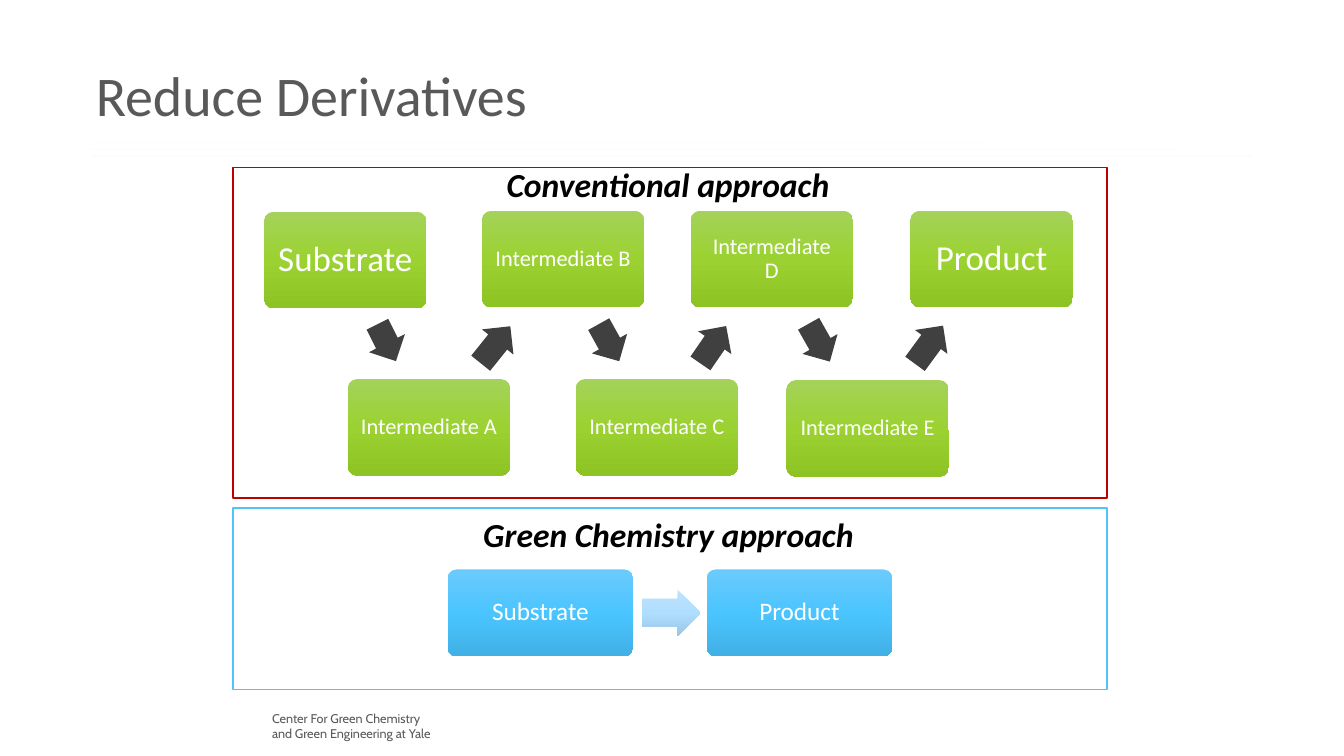
import copy

import pptx
import pptx.util
import pptx.dml.color
import pptx.enum.shapes
import pptx.enum.text
import pptx.oxml
import pptx.oxml.ns

Inches = pptx.util.Inches
Pt = pptx.util.Pt
RGB = pptx.dml.color.RGBColor
Kind = pptx.enum.shapes.MSO_SHAPE
Align = pptx.enum.text.PP_ALIGN
Anchor = pptx.enum.text.MSO_ANCHOR
qn = pptx.oxml.ns.qn

WHITE = RGB(0xFF, 0xFF, 0xFF)
BLACK = RGB(0x00, 0x00, 0x00)
GREY = RGB(0x59, 0x59, 0x59)
DARK = RGB(0x40, 0x40, 0x40)
RED = RGB(0xC0, 0x00, 0x00)
CYAN = RGB(0x51, 0xC3, 0xF9)
GREEN = [RGB(0xA4, 0xD2, 0x5A), RGB(0x9B, 0xD2, 0x31), RGB(0x8D, 0xC3, 0x23)]
BLUE = [RGB(0x6B, 0xCA, 0xFC), RGB(0x4B, 0xC5, 0xFF), RGB(0x40, 0xB0, 0xE5)]
PALE = [RGB(0xBF, 0xE3, 0xFD), RGB(0xAF, 0xDE, 0xFF), RGB(0x9A, 0xC6, 0xE5)]
RULES = [
    (0.92, 9.77, 1.41, RGB(0x4E, 0xB3, 0xCF)),
    (0.90, 11.71, 1.48, RGB(0x44, 0xC1, 0xA3)),
    (0.91, 12.42, 1.55, RGB(0x37, 0xA7, 0x6F)),
]

# Label, left, top, text size
STEPS = [
    ("Substrate", 2.62, 2.10, 25),
    ("Intermediate A", 3.45, 3.76, 16),
    ("Intermediate B", 4.78, 2.09, 16),
    ("Intermediate C", 5.71, 3.76, 16),
    ("Intermediate D", 6.85, 2.09, 16),
    ("Intermediate E", 7.80, 3.77, 16),
    ("Product", 9.03, 2.09, 25),
]
# Left, top, width, angle
ARROWS = [
    (3.63, 3.2, 0.41, 63.3),
    (4.68, 3.22, 0.47, 308.7),
    (5.83, 3.2, 0.42, 61),
    (6.85, 3.22, 0.45, 304.5),
    (7.91, 3.2, 0.43, 60.6),
    (8.98, 3.22, 0.47, 306.3),
]


class Deck:
    font = "Calibri"

    def __init__(self):
        self.show = pptx.Presentation()
        self.show.slide_width = Inches(13.33)
        self.show.slide_height = Inches(7.5)
        self.slide = self.show.slides.add_slide(self.show.slide_layouts[5])

    def put(self, frame, lines, size, color, align=Align.LEFT, font=None, strong=None):
        """Set each line as a paragraph with one styled run."""
        for i, line in enumerate(lines):
            para = frame.add_paragraph() if i else frame.paragraphs[0]
            para.alignment = align
            run = para.add_run()
            run.text = line
            run.font.name = font or self.font
            run.font.size = Pt(size)
            run.font.color.rgb = color
            run.font.bold = run.font.italic = strong

    def title(self, text, left, top, width, height):
        shape = self.slide.shapes.title
        shape.left, shape.top = Inches(left), Inches(top)
        shape.width, shape.height = Inches(width), Inches(height)
        frame = shape.text_frame
        frame.word_wrap = False
        frame.vertical_anchor = Anchor.TOP
        self.put(frame, [text], 40, GREY)

    def text(self, lines, left, top, width, height, size, color, **look):
        box = self.slide.shapes.add_textbox(
            Inches(left), Inches(top), Inches(width), Inches(height))
        box.text_frame.word_wrap = True
        self.put(box.text_frame, lines, size, color, **look)

    def rule(self, left, right, top, color):
        """Draw a hairline that is almost fully transparent."""
        line = self.slide.shapes.add_connector(
            pptx.enum.shapes.MSO_CONNECTOR.STRAIGHT,
            Inches(left), Inches(top), Inches(right), Inches(top))
        line.line.color.rgb = color
        line.line.width = Pt(0.5)
        props = line._element.spPr
        tint = next(props.iter(qn("a:srgbClr")))
        tint.append(pptx.oxml.parse_xml(
            '<a:alpha xmlns:a="http://schemas.openxmlformats.org/drawingml/2006/main" val="4000"/>'))
        props.append(pptx.oxml.parse_xml(
            '<a:effectLst xmlns:a="http://schemas.openxmlformats.org/drawingml/2006/main"/>'))

    def shape(self, kind, left, top, width, height):
        shape = self.slide.shapes.add_shape(
            kind, Inches(left), Inches(top), Inches(width), Inches(height))
        shape.shadow.inherit = False
        shape.line.fill.background()
        return shape

    def shade(self, shape, colors):
        """Fill with three colours running from top to bottom."""
        fill = shape.fill
        fill.gradient()
        fill.gradient_angle = 270
        stops = next(shape._element.spPr.iter(qn("a:gsLst")))
        stops.insert(1, copy.deepcopy(stops[0]))
        for stop, place, color in zip(fill.gradient_stops, (0, 0.5, 1), colors):
            stop.position = place
            stop.color.rgb = color

    def card(self, text, left, top, width, height, size, colors):
        shape = self.shape(Kind.ROUNDED_RECTANGLE, left, top, width, height)
        shape.adjustments[0] = 0.1
        self.shade(shape, colors)
        frame = shape.text_frame
        frame.word_wrap = True
        frame.vertical_anchor = Anchor.MIDDLE
        frame.margin_left = frame.margin_right = Inches(0.1)
        self.put(frame, [text], size, WHITE, Align.CENTER)
        frame.paragraphs[0].line_spacing = 0.9

    def arrow(self, left, top, width, height, angle=0):
        shape = self.shape(Kind.RIGHT_ARROW, left, top, width, height)
        shape.adjustments[0] = 0.6
        shape.adjustments[1] = 0.5
        shape.rotation = angle
        return shape

    def frame(self, top, height, color):
        shape = self.shape(Kind.RECTANGLE, 2.31, top, 8.67, height)
        shape.fill.background()
        shape.line.color.rgb = color
        shape.line.width = Pt(1)


def main():
    deck = Deck()
    deck.title("Reduce Derivatives", 0.85, 0.55, 4.64, 0.77)
    for rule in RULES:
        deck.rule(*rule)

    for label, left, top, size in STEPS:
        deck.card(label, left, top, 1.61, 0.96, size, GREEN)
    for left, top, width, angle in ARROWS:
        arrow = deck.arrow(left, top, width, 0.4, angle)
        arrow.fill.solid()
        arrow.fill.fore_color.rgb = DARK

    for label, left in (("Substrate", 4.44), ("Product", 7.01)):
        deck.card(label, left, 5.65, 1.84, 0.86, 18, BLUE)
    deck.shade(deck.arrow(6.37, 5.85, 0.58, 0.46), PALE)

    deck.text(["Conventional approach"], 4.91, 1.58, 3.43, 0.5, 24, BLACK,
              align=Align.CENTER, strong=True)
    deck.text(["Green Chemistry approach"], 4.44, 5.05, 4.38, 0.5, 24, BLACK,
              align=Align.CENTER, strong=True)
    deck.frame(1.66, 3.28, RED)
    deck.frame(5.04, 1.8, CYAN)
    deck.text(["Center For Green Chemistry", "and Green Engineering at Yale"],
              2.6, 7, 1.86, 0.4, 9, GREY, font="Cabin")
    deck.show.save("out.pptx")


if __name__ == "__main__":
    main()
